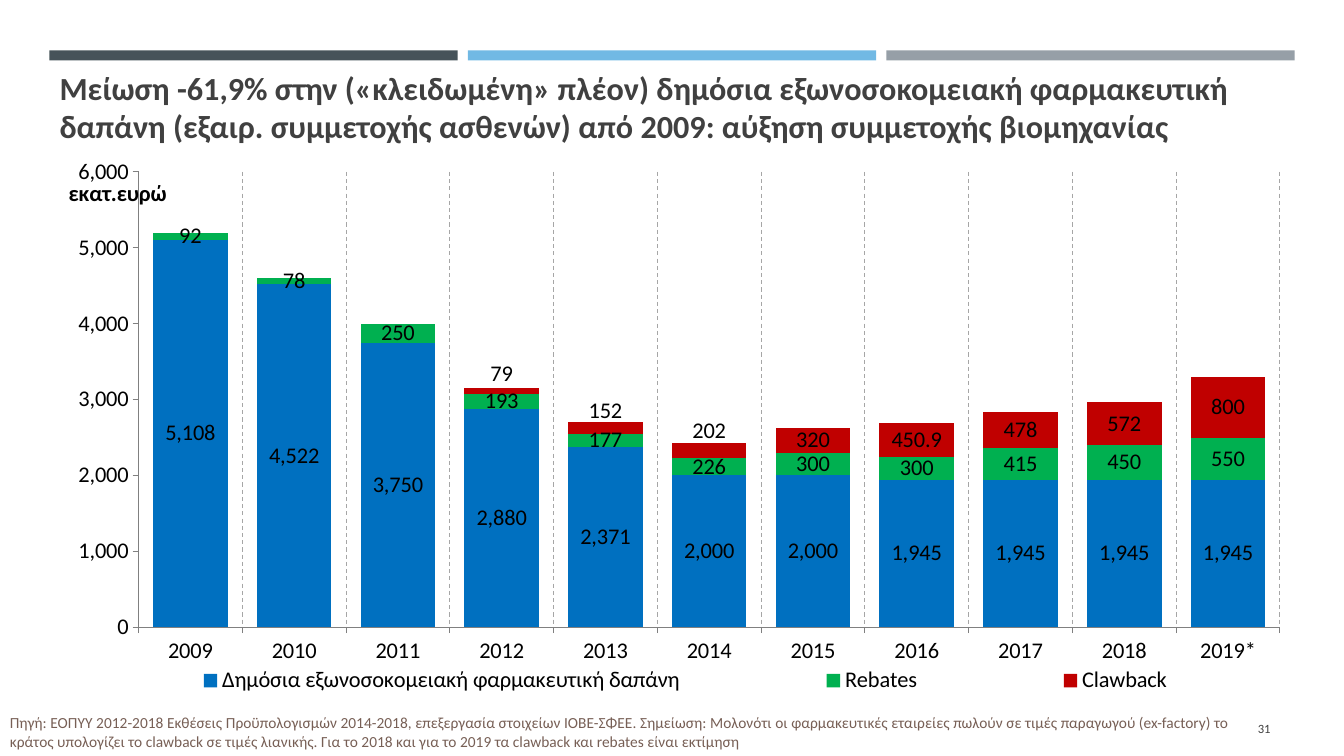
from lxml.etree import SubElement
from pptx import Presentation
from pptx.chart.data import CategoryChartData
from pptx.dml.color import RGBColor
from pptx.enum.chart import XL_CHART_TYPE, XL_LABEL_POSITION, XL_LEGEND_POSITION
from pptx.enum.chart import XL_TICK_LABEL_POSITION, XL_TICK_MARK
from pptx.enum.dml import MSO_LINE
from pptx.enum.shapes import MSO_SHAPE
from pptx.enum.text import MSO_ANCHOR, PP_ALIGN
from pptx.oxml.ns import qn
from pptx.util import Inches, Pt

TITLE = ("Μείωση -61,9% στην («κλειδωμένη» πλέον) δημόσια εξωνοσοκομειακή φαρμακευτική "
         "δαπάνη (εξαιρ. συμμετοχής ασθενών) από 2009: αύξηση συμμετοχής βιομηχανίας")
SOURCE_NOTE = (
    "Πηγή: ΕΟΠΥΥ 2012-2018 Εκθέσεις Προϋπολογισμών 2014-2018, επεξεργασία στοιχείων ΙΟΒΕ-ΣΦΕΕ. "
    "Σημείωση: Μολονότι οι φαρμακευτικές εταιρείες πωλούν σε τιμές παραγωγού (ex-factory) το "
    "κράτος υπολογίζει το clawback σε τιμές λιανικής. Για το 2018 και για το 2019 τα clawback "
    "και rebates είναι εκτίμηση")
PAGE_NUMBER = "31"
UNIT = "εκατ.ευρώ"

BLACK = RGBColor(0x00, 0x00, 0x00)
DARK_GREY = RGBColor(0x40, 0x40, 0x40)
BROWN = RGBColor(0x77, 0x5F, 0x55)
GRID_GREY = RGBColor(0xA6, 0xA6, 0xA6)
AXIS_GREY = RGBColor(0x80, 0x80, 0x80)
BAND_COLORS = [RGBColor(0x46, 0x53, 0x59), RGBColor(0x71, 0xB9, 0xE4), RGBColor(0x96, 0x9F, 0xA7)]

YEARS = ["2009", "2010", "2011", "2012", "2013", "2014",
         "2015", "2016", "2017", "2018", "2019*"]
SPENDING = [
    ("Δημόσια εξωνοσοκομειακή φαρμακευτική δαπάνη", RGBColor(0x00, 0x70, 0xC0), "#,##0",
     [5108, 4522, 3750, 2880, 2371, 2000, 2000, 1945, 1945, 1945, 1945]),
    ("Rebates", RGBColor(0x00, 0xB0, 0x50), "General",
     [92, 78, 250, 193, 177, 226, 300, 300, 415, 450, 550]),
    ("Clawback", RGBColor(0xC0, 0x00, 0x00), "General",
     [None, None, None, 79, 152, 202, 320, 450.9, 478, 572, 800]),
]
# Clawback labels lifted above their thin bars: year index -> share of chart height
LIFTED_LABELS = {3: -0.03, 4: -0.03, 5: -0.035}

SLIDE_W, SLIDE_H = 13.33, 7.5
MARGIN, BAND_W, BAND_GAP = 0.49, 4.05, 0.1
FONT = "Calibri"


def format_font(font, size, color=BLACK, bold=False):
    font.name, font.size, font.bold = FONT, Pt(size), bold
    font.color.rgb = color


def write(shape, text, size, color, bold=False, align=PP_ALIGN.LEFT,
          anchor=MSO_ANCHOR.TOP, line_spacing=None):
    frame = shape.text_frame
    frame.word_wrap = True
    frame.vertical_anchor = anchor
    paragraph = frame.paragraphs[0]
    paragraph.alignment = align
    paragraph.line_spacing = line_spacing
    run = paragraph.add_run()
    run.text = text
    format_font(run.font, size, color, bold)


def place_manually(layout, **settings):
    """Fill a chart layout element, in the order the schema asks for."""
    manual = SubElement(layout, qn("c:manualLayout"))
    for key, value in settings.items():
        SubElement(manual, qn("c:" + key)).set("val", str(value))


def new_layout(after):
    """Put a fresh layout element behind the given one, replacing any old one."""
    parent = after.getparent()
    for old in parent.findall(qn("c:layout")):
        parent.remove(old)
    layout = after.makeelement(qn("c:layout"), {})
    after.addnext(layout)
    return layout


def add_bands(slide):
    for column, color in enumerate(BAND_COLORS):
        left = MARGIN + column * (BAND_W + BAND_GAP)
        band = slide.shapes.add_shape(MSO_SHAPE.RECTANGLE, Inches(left), Inches(0.5),
                                      Inches(BAND_W), Inches(0.1))
        band.shadow.inherit = False
        band.fill.solid()
        band.fill.fore_color.rgb = color
        band.line.fill.background()


def style_axes(chart):
    years, amounts = chart.category_axis, chart.value_axis
    for axis in (years, amounts):
        axis.major_tick_mark = XL_TICK_MARK.OUTSIDE
        axis.minor_tick_mark = XL_TICK_MARK.NONE
        axis.format.line.color.rgb = AXIS_GREY
        axis.format.line.width = Pt(0.75)
        format_font(axis.tick_labels.font, 16)
    years.tick_label_position = XL_TICK_LABEL_POSITION.LOW
    years.has_major_gridlines = True
    grid = years.major_gridlines.format.line
    grid.color.rgb, grid.width, grid.dash_style = GRID_GREY, Pt(0.75), MSO_LINE.DASH

    amounts.has_major_gridlines = False
    amounts.minimum_scale, amounts.maximum_scale, amounts.major_unit = 0, 6000, 1000
    amounts.tick_labels.number_format = "#,##0"
    amounts.tick_labels.number_format_is_linked = False
    unit = amounts.axis_title.text_frame
    unit.text = UNIT
    format_font(unit.paragraphs[0].runs[0].font, 16, bold=True)
    title = amounts.axis_title._element
    body = title.find(".//" + qn("a:bodyPr"))
    body.set("rot", "0")
    body.set("vert", "horz")
    place_manually(new_layout(title.find(qn("c:tx"))),
                   xMode="edge", yMode="edge", x=0, y=0.04)


def style_series(plot):
    for series, (_, color, number_format, _) in zip(plot.series, SPENDING):
        series.format.fill.solid()
        series.format.fill.fore_color.rgb = color
        labels = series.data_labels
        labels.show_value = True
        labels.position = XL_LABEL_POSITION.CENTER
        labels.number_format = number_format
        labels.number_format_is_linked = False
        format_font(labels.font, 16)
    clawback = plot.series[2]
    for year, lift in LIFTED_LABELS.items():
        label = clawback.points[year].data_label
        format_font(label.font, 16)
        label.position = XL_LABEL_POSITION.CENTER
        element = clawback.data_labels._element.findall(qn("c:dLbl"))[-1]
        place_manually(new_layout(element.find(qn("c:idx"))), x=0, y=lift)


def add_spending_chart(slide):
    data = CategoryChartData()
    data.categories = YEARS
    for name, _, _, values in SPENDING:
        data.add_series(name, values)
    chart = slide.shapes.add_chart(XL_CHART_TYPE.COLUMN_STACKED, Inches(0.64), Inches(1.51),
                                   Inches(12.44), Inches(5.45), data).chart
    format_font(chart.font, 16)
    chart.has_title = False
    plot = chart.plots[0]
    plot.gap_width, plot.overlap, plot.vary_by_categories = 39, 100, False
    style_axes(chart)
    style_series(plot)

    chart.has_legend = True
    chart.legend.position = XL_LEGEND_POSITION.BOTTOM
    chart.legend.include_in_layout = False
    format_font(chart.legend.font, 16)
    place_manually(new_layout(chart.legend._element.find(qn("c:legendPos"))),
                   xMode="edge", yMode="edge", x=0, y=0.927, w=0.99, h=0.07)

    area = chart._chartSpace.find(".//" + qn("c:plotArea"))
    for old in area.findall(qn("c:layout")):
        area.remove(old)
    layout = area.makeelement(qn("c:layout"), {})
    area.insert(0, layout)
    place_manually(layout, layoutTarget="inner", xMode="edge", yMode="edge",
                   x=0.059, y=0.036, w=0.91, h=0.829)


def main():
    deck = Presentation()
    deck.slide_width, deck.slide_height = Inches(SLIDE_W), Inches(SLIDE_H)
    slide = deck.slides.add_slide(deck.slide_layouts[5])
    add_bands(slide)

    title = slide.shapes.title
    title.left, title.top = Inches(MARGIN), Inches(0.66)
    title.width, title.height = Inches(SLIDE_W - 2 * MARGIN), Inches(0.83)
    write(title, TITLE, 23, DARK_GREY, bold=True, anchor=MSO_ANCHOR.BOTTOM)

    add_spending_chart(slide)
    page = slide.shapes.add_textbox(Inches(11.55), Inches(7.03), Inches(1.15), Inches(0.4))
    write(page, PAGE_NUMBER, 9, DARK_GREY, align=PP_ALIGN.RIGHT, anchor=MSO_ANCHOR.MIDDLE)
    note = slide.shapes.add_textbox(0, Inches(7.01), Inches(12.3), Inches(0.5))
    write(note, SOURCE_NOTE, 11, BROWN, align=PP_ALIGN.JUSTIFY, line_spacing=1.07)
    deck.save("out.pptx")


if __name__ == "__main__":
    main()
